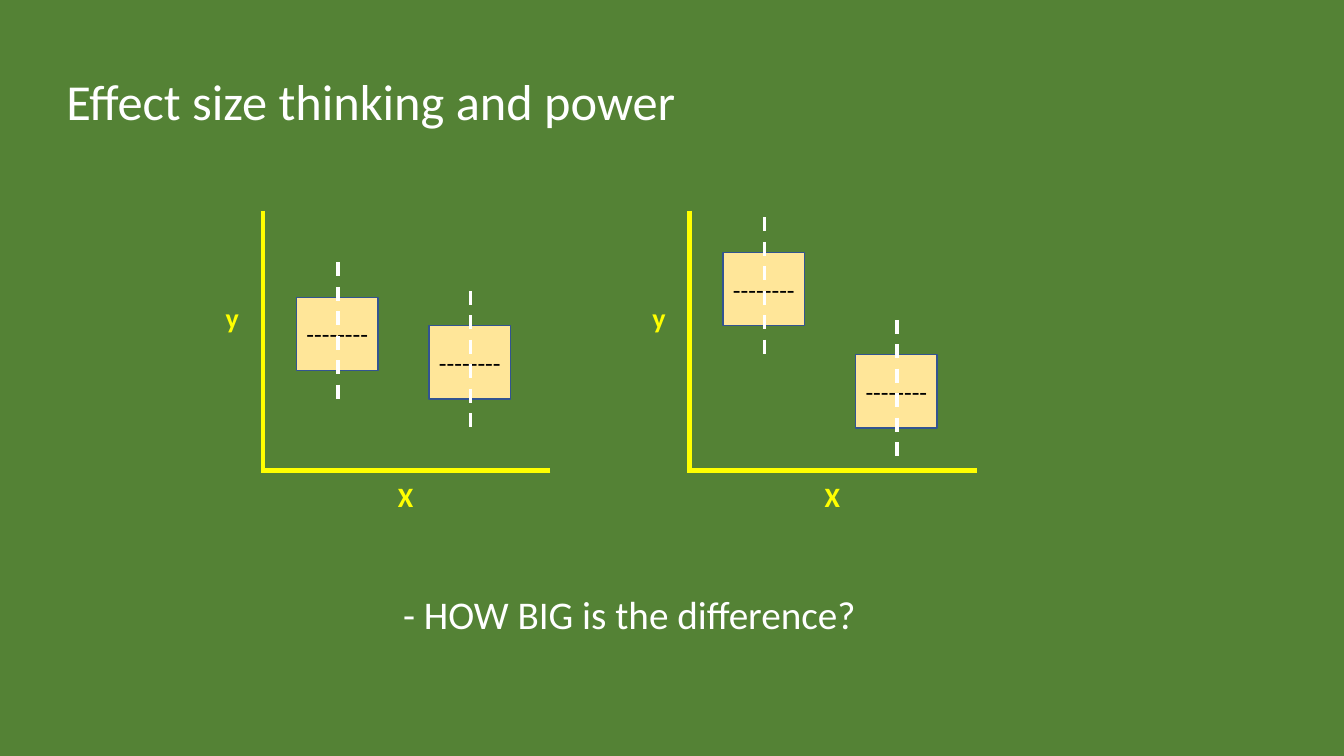
from lxml.etree import SubElement
from pptx import Presentation
from pptx.dml.color import RGBColor
from pptx.enum.dml import MSO_LINE
from pptx.enum.shapes import MSO_CONNECTOR, MSO_SHAPE
from pptx.enum.text import MSO_ANCHOR, MSO_AUTO_SIZE, PP_ALIGN
from pptx.oxml.ns import qn
from pptx.util import Cm, Pt

GREEN, WHITE, YELLOW = "548235", "FFFFFF", "FFFF00"
SAND, BLUE, BLACK = "FFE699", "325491", "000000"

PLOT_WIDTH, PLOT_HEIGHT = 7.24, 6.6
BOX_WIDTH, BOX_HEIGHT = 2.06, 1.85
BOX_OFFSETS = (0.84, 4.18)
WHISKER_OVERHANG = 0.88


def color(hex_string):
    return RGBColor.from_string(hex_string)


def write_text(shape, text, size=18, hex_color=WHITE, bold=False,
               align=PP_ALIGN.LEFT, anchor=MSO_ANCHOR.TOP, wrap=False):
    frame = shape.text_frame
    frame.auto_size = MSO_AUTO_SIZE.NONE
    frame.word_wrap = wrap
    frame.vertical_anchor = anchor
    paragraph = frame.paragraphs[0]
    paragraph.alignment = align
    run = paragraph.add_run()
    run.text = text
    run.font.name = "Calibri"
    run.font.size = Pt(size)
    run.font.bold = bold
    run.font.color.rgb = color(hex_color)


def add_label(slide, text, left, top, width, height, **text_format):
    label = slide.shapes.add_textbox(Cm(left), Cm(top), Cm(width), Cm(height))
    write_text(label, text, **text_format)


def add_line(slide, start, end, hex_color, width, dash=None):
    line = slide.shapes.add_connector(
        MSO_CONNECTOR.STRAIGHT, *map(Cm, start), *map(Cm, end))
    line.line.color.rgb = color(hex_color)
    line.line.width = Pt(width)
    line.line.dash_style = dash
    SubElement(line._element.spPr, qn("a:effectLst"))


def add_title(slide, text, left, top, width, height):
    title = slide.shapes.title
    title.left, title.top = Cm(left), Cm(top)
    title.width, title.height = Cm(width), Cm(height)
    write_text(title, text, size=36, wrap=True)


def add_box_with_whisker(slide, left, top):
    box = slide.shapes.add_shape(
        MSO_SHAPE.RECTANGLE, Cm(left), Cm(top), Cm(BOX_WIDTH), Cm(BOX_HEIGHT))
    box.shadow.inherit = False
    box.fill.solid()
    box.fill.fore_color.rgb = color(SAND)
    box.line.color.rgb = color(BLUE)
    box.line.width = Pt(1)
    # Median mark
    write_text(box, "--------", hex_color=BLACK,
               align=PP_ALIGN.CENTER, anchor=MSO_ANCHOR.MIDDLE)
    # Whisker through the middle of the box
    middle = left + BOX_WIDTH / 2 + 0.02
    add_line(slide, (middle, top - WHISKER_OVERHANG),
             (middle, top + BOX_HEIGHT + WHISKER_OVERHANG),
             WHITE, 2.5, MSO_LINE.DASH)


def add_box_plot(slide, left, top, box_tops):
    # Axes
    baseline = top + PLOT_HEIGHT - 0.05
    add_line(slide, (left, top), (left, top + PLOT_HEIGHT), YELLOW, 3.25)
    add_line(slide, (left + PLOT_WIDTH, baseline), (left, baseline),
             YELLOW, 3.25)
    # Axis labels
    for text, across, down in (("X", 3.15, 6.65), ("y", -1.19, 2.13)):
        add_label(slide, text, left + across, top + down, 0.9, 1.12,
                  size=20, hex_color=YELLOW, bold=True)
    # The two groups
    for offset, box_top in zip(BOX_OFFSETS, box_tops):
        add_box_with_whisker(slide, left + offset, top + box_top)


def main():
    presentation = Presentation()
    presentation.slide_width, presentation.slide_height = Cm(33.87), Cm(19.05)
    slide = presentation.slides.add_slide(presentation.slide_layouts[5])
    slide.background.fill.solid()
    slide.background.fill.fore_color.rgb = color(GREEN)

    add_title(slide, "Effect size thinking and power", 1.42, 1.65, 27.2, 1.8)
    # Small difference, then large difference
    add_box_plot(slide, 6.63, 5.31, box_tops=(2.18, 2.9))
    add_box_plot(slide, 17.38, 5.31, box_tops=(1.05, 3.63))
    add_label(slide, "- HOW BIG is the difference?", 9.91, 14.76, 12.07, 2.64,
              size=28)
    presentation.save("out.pptx")


if __name__ == "__main__":
    main()
